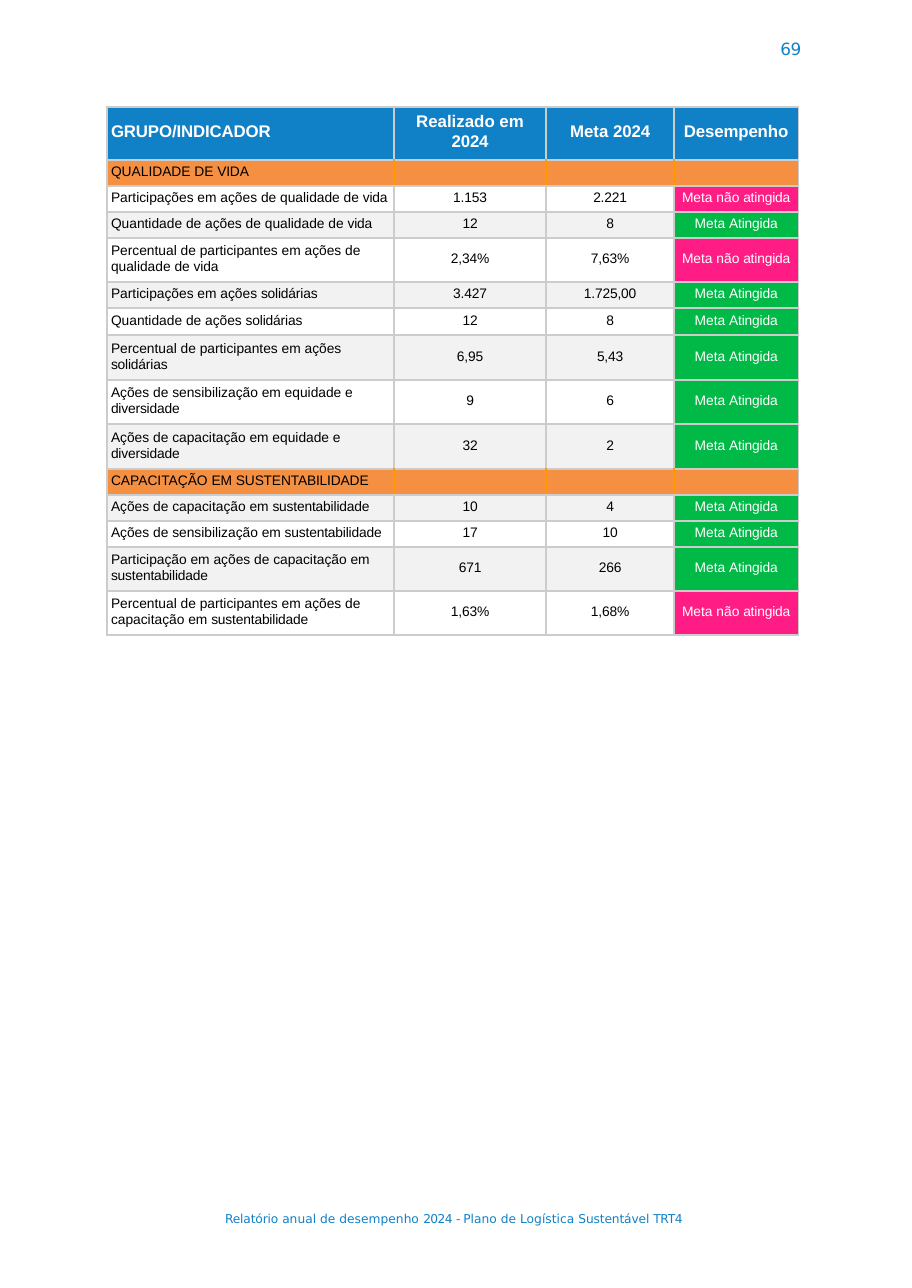
"""Builds the 2024 performance table page of the sustainable logistics report."""
from lxml.etree import SubElement
from pptx import Presentation
from pptx.dml.color import RGBColor
from pptx.enum.text import MSO_ANCHOR as Anchor, PP_ALIGN as Align
from pptx.oxml.ns import qn
from pptx.util import Inches, Pt

EMU_PER_PX = 8305
SLIDE_WIDTH, SLIDE_HEIGHT = Inches(8.28), Inches(11.69)
BLUE = RGBColor(0x11, 0x81, 0xC7)
ORANGE = RGBColor(0xF5, 0x8F, 0x42)
PINK = RGBColor(0xFF, 0x1D, 0x85)
GREEN = RGBColor(0x00, 0xB9, 0x46)
GREY = RGBColor(0xF2, 0xF2, 0xF2)
WHITE = RGBColor(0xFF, 0xFF, 0xFF)
BLACK = RGBColor(0x00, 0x00, 0x00)
GRID = RGBColor(0xCC, 0xCC, 0xCC)
GROUP_DIVIDER = RGBColor(0xFF, 0x99, 0x00)

MET, MISSED = "Meta Atingida", "Meta não atingida"
STATUS_FILL = {MET: GREEN, MISSED: PINK}
HEADER = ("GRUPO/INDICADOR", "Realizado em 2024", "Meta 2024", "Desempenho")
GROUPS = {
    "QUALIDADE DE VIDA": [
        ("Participações em ações de qualidade de vida", "1.153", "2.221", MISSED),
        ("Quantidade de ações de qualidade de vida", "12", "8", MET),
        ("Percentual de participantes em ações de qualidade de vida", "2,34%", "7,63%", MISSED),
        ("Participações em ações solidárias", "3.427", "1.725,00", MET),
        ("Quantidade de ações solidárias", "12", "8", MET),
        ("Percentual de participantes em ações solidárias", "6,95", "5,43", MET),
        ("Ações de sensibilização em equidade e diversidade", "9", "6", MET),
        ("Ações de capacitação em equidade e diversidade", "32", "2", MET),
    ],
    "CAPACITAÇÃO EM SUSTENTABILIDADE": [
        ("Ações de capacitação em sustentabilidade", "10", "4", MET),
        ("Ações de sensibilização em sustentabilidade", "17", "10", MET),
        ("Participação em ações de capacitação em sustentabilidade", "671", "266", MET),
        ("Percentual de participantes em ações de capacitação em sustentabilidade",
         "1,63%", "1,68%", MISSED),
    ],
}
PAGE_NUMBER = [("69", -0.2)]
FOOTER = [("Relatório ", -0.1), ("anual de desempenho ", 0), ("2024 ", -0.4), ("- ", -0.7),
          ("Plano de Logística ", 0), ("Sustentável ", -0.1), ("TRT4", -0.2)]

TABLE_LEFT = 107
COLUMN_WIDTHS = (287, 152, 128, 124)
ROW_EDGES = (107, 160, 186, 212, 238, 282, 308, 335, 380, 424, 469, 495, 521, 547, 591, 635)


def px(length):
    return length * EMU_PER_PX


def add_run(paragraph, text, spacing, font_name, size, color, bold=False):
    run = paragraph.add_run()
    run.text = text
    font = run.font
    font.name, font.size, font.bold = font_name, Pt(size), bold
    font.color.rgb = color
    run._r.get_or_add_rPr().set("spc", str(round(spacing * 100)))


def add_line(slide, left, top, width, height, runs, size):
    frame = slide.shapes.add_textbox(px(left), px(top), px(width), px(height)).text_frame
    frame.margin_left = frame.margin_right = frame.margin_top = frame.margin_bottom = 0
    frame.word_wrap = False
    for text, spacing in runs:
        add_run(frame.paragraphs[0], text, spacing, "DejaVu Sans", size, BLUE)


def set_borders(cell, left, right):
    properties = cell._tc.get_or_add_tcPr()
    for side, color in (("L", left), ("R", right), ("T", GRID), ("B", GRID)):
        border = SubElement(properties, qn(f"a:ln{side}"), w=str(Pt(1)))
        fill = SubElement(border, qn("a:solidFill"))
        SubElement(fill, qn("a:srgbClr"), val=str(color))


def fill_cell(cell, text, column, fill, color, size=9, bold=False, divider=GRID):
    set_borders(cell, divider if column > 0 else GRID,
                divider if column < len(HEADER) - 1 else GRID)
    cell.fill.solid()
    cell.fill.fore_color.rgb = fill
    cell.vertical_anchor = Anchor.MIDDLE
    cell.margin_left = px(4 if column == 0 else 0)
    cell.margin_right = cell.margin_top = 0
    cell.margin_bottom = px(5 if bold else 3)
    paragraph = cell.text_frame.paragraphs[0]
    paragraph.alignment = Align.LEFT if column == 0 else Align.CENTER
    paragraph.line_spacing = 1.05
    opening, space, last_word = text.rpartition(" ")
    if opening:
        add_run(paragraph, opening + space, 0, "Arial", size, color, bold)
    if last_word:
        add_run(paragraph, last_word, -0.1, "Arial", size, color, bold)
    else:
        SubElement(paragraph._p, qn("a:endParaRPr"), sz=str(size * 100))


def add_indicator_table(slide):
    rows = [HEADER]
    for group, indicators in GROUPS.items():
        rows += [(group, "", "", ""), *indicators]
    table = slide.shapes.add_table(
        len(rows), len(HEADER), px(TABLE_LEFT), px(ROW_EDGES[0]),
        px(sum(COLUMN_WIDTHS)), px(ROW_EDGES[-1] - ROW_EDGES[0])).table
    table.first_row = table.horz_banding = False
    for column, width in zip(table.columns, COLUMN_WIDTHS):
        column.width = px(width)
    for row, top, bottom in zip(table.rows, ROW_EDGES, ROW_EDGES[1:]):
        row.height = px(bottom - top)
    for r, row in enumerate(rows):
        for c, text in enumerate(row):
            cell = table.cell(r, c)
            if r == 0:
                fill_cell(cell, text, c, BLUE, WHITE, size=11, bold=True)
            elif row[0] in GROUPS:
                fill_cell(cell, text, c, ORANGE, BLACK, divider=GROUP_DIVIDER)
            elif text in STATUS_FILL:
                fill_cell(cell, text, c, STATUS_FILL[text], WHITE)
            else:
                fill_cell(cell, text, c, GREY if r % 2 else WHITE, BLACK)
    achieved = table.cell(0, 1)
    achieved.margin_left = achieved.margin_right = px(15)


def main():
    deck = Presentation()
    deck.slide_width, deck.slide_height = SLIDE_WIDTH, SLIDE_HEIGHT
    slide = deck.slides.add_slide(deck.slide_layouts[6])
    add_indicator_table(slide)
    add_line(slide, 225, 1210, 462, 18, FOOTER, 8)
    add_line(slide, 780, 39, 23, 21, PAGE_NUMBER, 11)
    deck.save("out.pptx")


if __name__ == "__main__":
    main()
